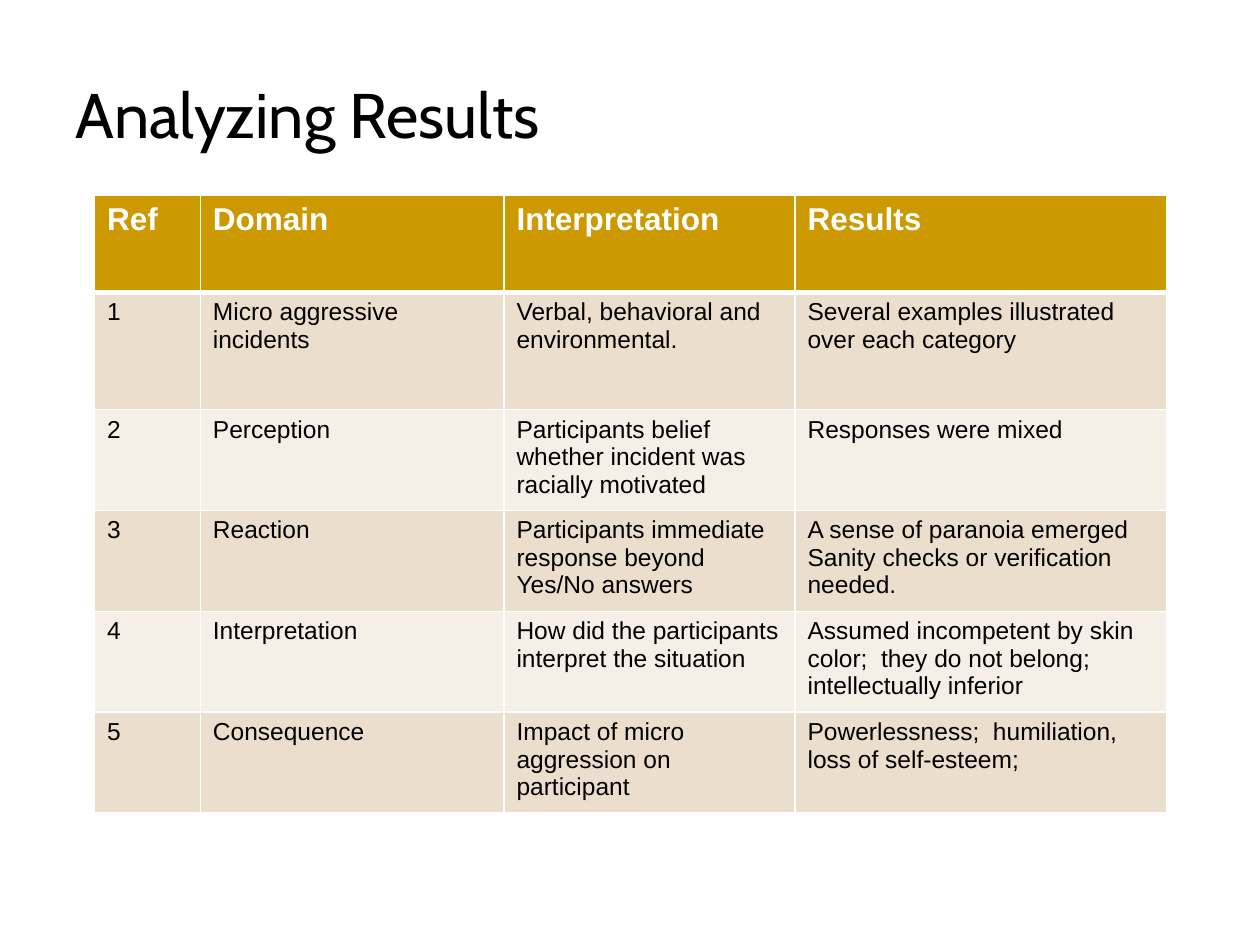
"""Build the "Analyzing Results" slide with its table of domains."""
from dataclasses import dataclass

from lxml import etree
from pptx import Presentation
from pptx.dml.color import RGBColor
from pptx.enum import text
from pptx.oxml.ns import qn
from pptx.util import Inches, Pt

SLIDE_WIDTH, SLIDE_HEIGHT = 10, 7.5
COLUMN_WIDTHS = (0.84, 2.41, 2.31, 2.95)
ROW_HEIGHTS = (0.77, 0.93, 0.77, 0.77, 0.77, 0.77)
BAND_FILLS = ("F6EFE7", "ECDECC")
RULE_COLOR = "FFFFFF"
HEADINGS = ("Ref", "Domain", "Interpretation", "Results")


@dataclass(frozen=True)
class Finding:
    """One domain of the study with its reading and its outcome."""
    domain: str
    interpretation: str
    results: str


@dataclass(frozen=True)
class RowStyle:
    """The look of one table row; rules are in points."""
    fill: str
    font: dict
    top: float = 1
    bottom: float = 1


FINDINGS = (
    Finding("Micro aggressive incidents", "Verbal, behavioral and environmental.",
            "Several examples illustrated over each category"),
    Finding("Perception", "Participants belief whether incident was racially motivated",
            "Responses were mixed"),
    Finding("Reaction", "Participants immediate response beyond Yes/No answers",
            "A sense of paranoia emerged\nSanity checks or verification needed."),
    Finding("Interpretation", "How did the participants interpret the situation",
            "Assumed incompetent by skin color;  they do not belong;  intellectually inferior"),
    Finding("Consequence", "Impact of micro aggression on participant",
            "Powerlessness;  humiliation, loss of self-esteem;"),
)
TITLE_FONT = {"name": "Cabin", "size": Pt(36), "bold": False}
HEADING_FONT = {"name": "Arial", "size": Pt(18), "bold": True}
BODY_FONT = {"name": "Arial", "size": Pt(14), "bold": False}


def rgb(color: str) -> RGBColor:
    """Turn a hex string into a colour."""
    return RGBColor.from_string(color)


def format_text(frame, font: dict, color: str) -> None:
    """Apply font values and a colour to every run of a text frame."""
    for paragraph in frame.paragraphs:
        for run in paragraph.runs:
            for attribute, value in font.items():
                setattr(run.font, attribute, value)
            run.font.color.rgb = rgb(color)


def add_rules(cell, top: float, bottom: float) -> None:
    """Draw the four rules around a cell."""
    properties = cell._tc.get_or_add_tcPr()
    for side, width in {"L": 1, "R": 1, "T": top, "B": bottom}.items():
        rule = etree.SubElement(properties, qn(f"a:ln{side}"), w=str(Pt(width)))
        fill = etree.SubElement(rule, qn("a:solidFill"))
        etree.SubElement(fill, qn("a:srgbClr"), val=RULE_COLOR)


def fill_row(cells, words: tuple, style: RowStyle, color: str) -> None:
    """Write and style one table row."""
    for cell, wording in zip(cells, words):
        cell.text = wording
        add_rules(cell, style.top, style.bottom)
        cell.fill.solid()
        cell.fill.fore_color.rgb = rgb(style.fill)
        format_text(cell.text_frame, style.font, color)


def add_title(slide, wording: str) -> None:
    """Place the slide title, resting on the bottom of its box."""
    title = slide.shapes.add_textbox(
        Inches(0.05 * SLIDE_WIDTH), Inches(0.08), Inches(7.42), Inches(1.17))
    frame = title.text_frame
    frame.text = wording
    frame.word_wrap = True
    frame.vertical_anchor = text.MSO_ANCHOR.BOTTOM
    format_text(frame, TITLE_FONT, "000000")


def add_findings(slide) -> None:
    """Place the table with its heading row and banded findings."""
    table = slide.shapes.add_table(
        len(ROW_HEIGHTS), len(COLUMN_WIDTHS), Inches(0.75), Inches(1.55),
        Inches(sum(COLUMN_WIDTHS)), Inches(sum(ROW_HEIGHTS))).table
    for column, width in zip(table.columns, COLUMN_WIDTHS):
        column.width = Inches(width)
    for row, height in zip(table.rows, ROW_HEIGHTS):
        row.height = Inches(height)

    heading = RowStyle("CC9900", HEADING_FONT, bottom=3)
    fill_row(table.rows[0].cells, HEADINGS, heading, "FFFFFF")
    for ref, finding in enumerate(FINDINGS, start=1):
        words = (str(ref), finding.domain, finding.interpretation, finding.results)
        style = RowStyle(BAND_FILLS[ref % 2], BODY_FONT, top=3 if ref == 1 else 1)
        fill_row(table.rows[ref].cells, words, style, "000000")


def main() -> None:
    """Build and save the slide."""
    deck = Presentation()
    deck.slide_width, deck.slide_height = Inches(SLIDE_WIDTH), Inches(SLIDE_HEIGHT)
    slide = deck.slides.add_slide(deck.slide_layouts[6])
    add_title(slide, "Analyzing Results")
    add_findings(slide)
    deck.save("out.pptx")


if __name__ == "__main__":
    main()
